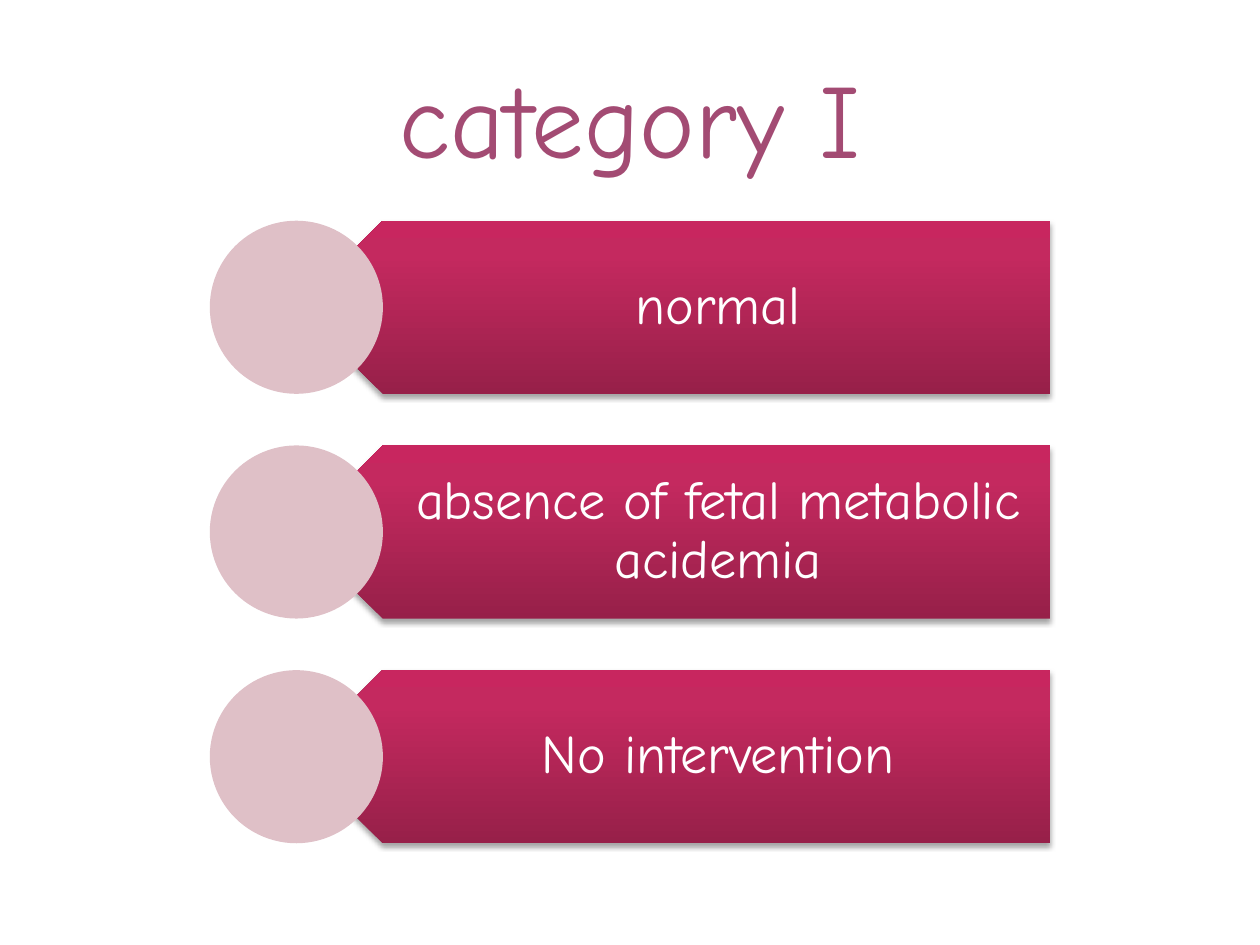
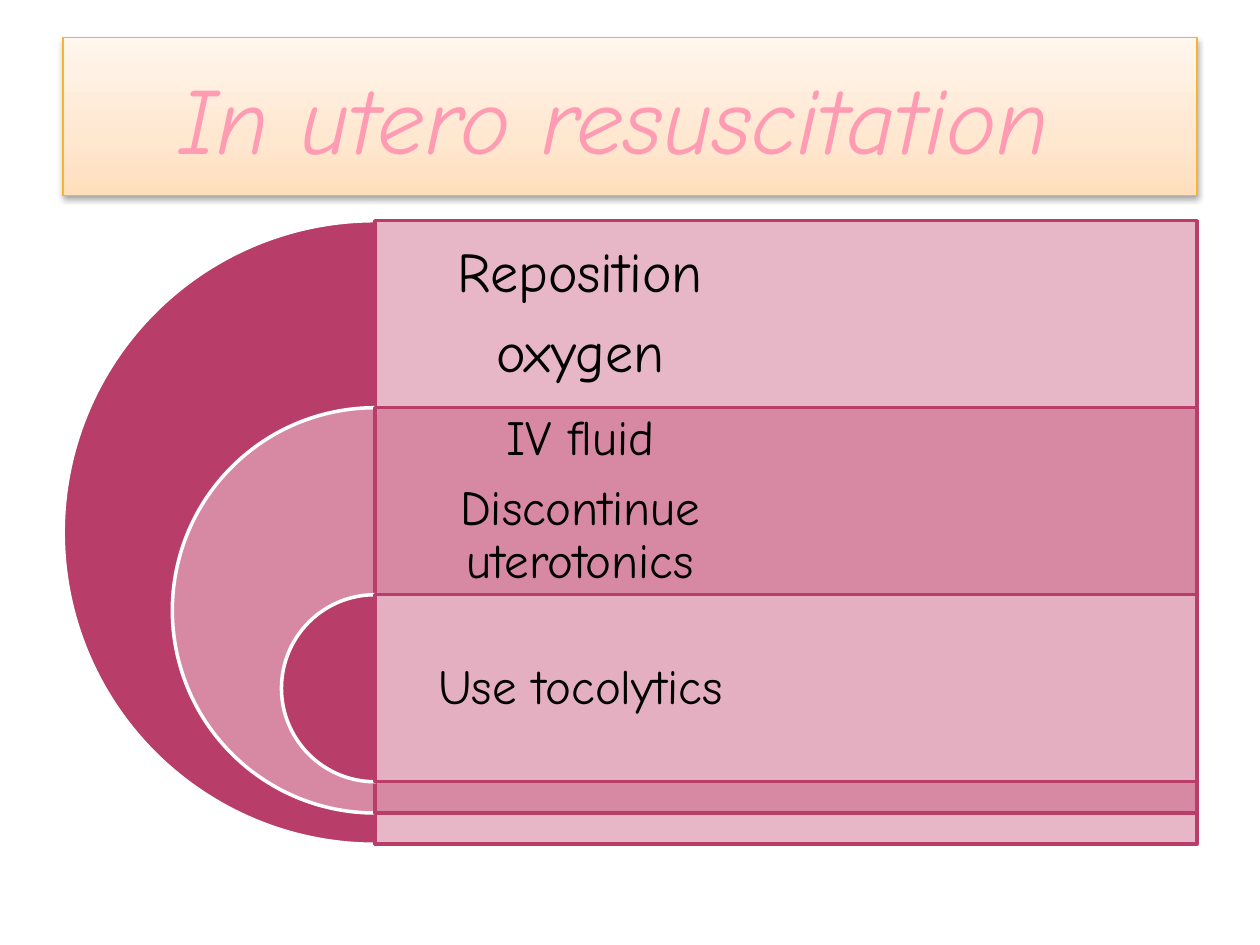
from lxml import etree
from pptx import Presentation
from pptx.dml.color import RGBColor
from pptx.enum.shapes import MSO_SHAPE
from pptx.enum.text import MSO_ANCHOR, MSO_AUTO_SIZE, PP_ALIGN
from pptx.oxml.ns import qn
from pptx.util import Cm, Pt

PENTAGON, CIRCLE = MSO_SHAPE.PENTAGON, MSO_SHAPE.OVAL
PIE, RECTANGLE = MSO_SHAPE.PIE, MSO_SHAPE.RECTANGLE
MIDDLE, CENTER, NO_AUTOFIT = MSO_ANCHOR.MIDDLE, PP_ALIGN.CENTER, MSO_AUTO_SIZE.NONE

FONT = "Comic Neue"
WHITE = RGBColor(0xFF, 0xFF, 0xFF)
BLACK = RGBColor(0x00, 0x00, 0x00)
MAUVE = RGBColor(0xA3, 0x4B, 0x73)
TITLE_PINK = RGBColor(0xFF, 0x9B, 0xB2)
ORANGE = RGBColor(0xF8, 0xB3, 0x33)
DUSTY_PINK = RGBColor(0xDF, 0xC0, 0xC7)
CRIMSON = RGBColor(0xB8, 0x3D, 0x68)
ROSE = RGBColor(0xD7, 0x88, 0xA3)
PALE_ROSE = RGBColor(0xE5, 0xAF, 0xC2)
PLATE_STOPS = [
    (0, RGBColor(0x97, 0x20, 0x49)),
    (80, RGBColor(0xC4, 0x29, 0x5F)),
    (100, RGBColor(0xC8, 0x26, 0x5F)),
]
BANNER_STOPS = [
    (0, RGBColor(0xFF, 0xDE, 0xBC)),
    (35, RGBColor(0xFF, 0xE7, 0xD0)),
    (100, RGBColor(0xFF, 0xF6, 0xED)),
]


def add_glossy_look(shape, stops):
    """Give the shape a gradient rising from its bottom edge and a soft shadow."""
    shape.fill.gradient()
    shape.fill.gradient_angle = 90
    properties = shape._element.spPr
    stop_list = properties.find(qn("a:gradFill")).find(qn("a:gsLst"))
    stop_list.clear()
    for position, color in stops:
        stop = etree.SubElement(stop_list, qn("a:gs"), pos=str(position * 1000))
        etree.SubElement(stop, qn("a:srgbClr"), val=str(color))
    shape.shadow.inherit = False
    shadow = etree.SubElement(
        properties.find(qn("a:effectLst")), qn("a:outerShdw"),
        blurRad=str(Pt(3.1)), dist=str(Pt(1.8)), dir="5400000", rotWithShape="0")
    shadow_color = etree.SubElement(shadow, qn("a:srgbClr"), val="000000")
    etree.SubElement(shadow_color, qn("a:alpha"), val="35000")


def add_label(slide, box, insets, lines, size, color):
    """Add centred paragraphs; box and insets are in centimetres."""
    frame = slide.shapes.add_textbox(*map(Cm, box)).text_frame
    frame.word_wrap = True
    frame.vertical_anchor = MIDDLE
    frame.margin_left, frame.margin_top, frame.margin_right, frame.margin_bottom = map(Cm, insets)
    frame.text = "\n".join(lines)
    for paragraph in frame.paragraphs:
        paragraph.alignment = CENTER
        paragraph.line_spacing = 0.9
        paragraph.space_after = Pt(size * 0.36)
        paragraph.font.name = FONT
        paragraph.font.size = Pt(size)
        paragraph.font.color.rgb = color


presentation = Presentation()
presentation.slide_width = Cm(25.4)
presentation.slide_height = Cm(19.05)

# Slides and titles
slides = []
for text, size, color, italic in [
    ("category I", 60, MAUVE, False),
    ("In utero resuscitation ", 54, TITLE_PINK, True),
]:
    slide = presentation.slides.add_slide(presentation.slide_layouts[5])
    title = slide.shapes.title
    title.left, title.top, title.width, title.height = Cm(1.27), Cm(0.76), Cm(22.86), Cm(3.18)
    title.text_frame.text = text
    title.text_frame.auto_size = NO_AUTOFIT
    title.text_frame.vertical_anchor = MIDDLE
    paragraph = title.text_frame.paragraphs[0]
    paragraph.alignment = CENTER
    paragraph.font.name = FONT
    paragraph.font.size = Pt(size)
    paragraph.font.italic = italic
    paragraph.font.color.rgb = color
    slides.append(slide)
category_slide, resuscitation_slide = slides

CONTENT_TOP = 4.45

# Category I: three plates pointing at circles
ROW_HEIGHT, ROW_PITCH = 3.49, 4.53
for row, text in enumerate(["normal", "absence of fetal metabolic acidemia", "No intervention"]):
    top = CONTENT_TOP + row * ROW_PITCH
    plate = category_slide.shapes.add_shape(
        PENTAGON, Cm(5.97), Cm(top), Cm(15.21), Cm(ROW_HEIGHT))
    plate._element.spPr.find(qn("a:xfrm")).set("flipH", "1")
    plate.line.fill.background()
    add_glossy_look(plate, PLATE_STOPS)
    add_label(category_slide, (6.85, top, 14.32, ROW_HEIGHT), (1.5, 0.32, 0.57, 0.34),
              [text], 31, WHITE)
    circle = category_slide.shapes.add_shape(
        CIRCLE, Cm(4.23), Cm(top), Cm(ROW_HEIGHT), Cm(ROW_HEIGHT))
    circle.shadow.inherit = False
    circle.fill.solid()
    circle.fill.fore_color.rgb = DUSTY_PINK
    circle.line.fill.background()

# In utero resuscitation: nested half discs with bands
banner = resuscitation_slide.shapes.title
banner.line.color.rgb = ORANGE
banner.line.width = Pt(0.75)
add_glossy_look(banner, BANNER_STOPS)

CENTER_X, BAND_RIGHT = 7.56, 24.13
OUTER_DIAMETER, DIAMETER_STEP, BAND_PITCH = 12.57, 4.4, 3.77
steps = [
    (["Reposition", "oxygen"], 32, CRIMSON, PALE_ROSE, 90),
    (["IV fluid", "Discontinue uterotonics"], 28, ROSE, ROSE, 100),
    (["Use tocolytics"], 28, CRIMSON, PALE_ROSE, 100),
]
for level, (lines, size, disc_color, band_color, opacity) in enumerate(steps):
    top = CONTENT_TOP + level * BAND_PITCH
    diameter = OUTER_DIAMETER - level * DIAMETER_STEP
    half_disc = resuscitation_slide.shapes.add_shape(
        PIE, Cm(CENTER_X - diameter / 2), Cm(top), Cm(diameter), Cm(diameter))
    half_disc.adjustments[0], half_disc.adjustments[1] = 54, 162
    band = resuscitation_slide.shapes.add_shape(
        RECTANGLE, Cm(CENTER_X), Cm(top), Cm(BAND_RIGHT - CENTER_X), Cm(diameter))
    for shape, fill_color, line_color in [
        (half_disc, disc_color, WHITE),
        (band, band_color, CRIMSON),
    ]:
        shape.shadow.inherit = False
        shape.fill.solid()
        shape.fill.fore_color.rgb = fill_color
        shape.line.color.rgb = line_color
        shape.line.width = Pt(2)
    band_fill = band._element.spPr.find(qn("a:solidFill")).find(qn("a:srgbClr"))
    etree.SubElement(band_fill, qn("a:alpha"), val=str(opacity * 1000))
    add_label(resuscitation_slide, (CENTER_X, top, 8.28, BAND_PITCH), (0.32,) * 4,
              lines, size, BLACK)

presentation.save("out.pptx")
